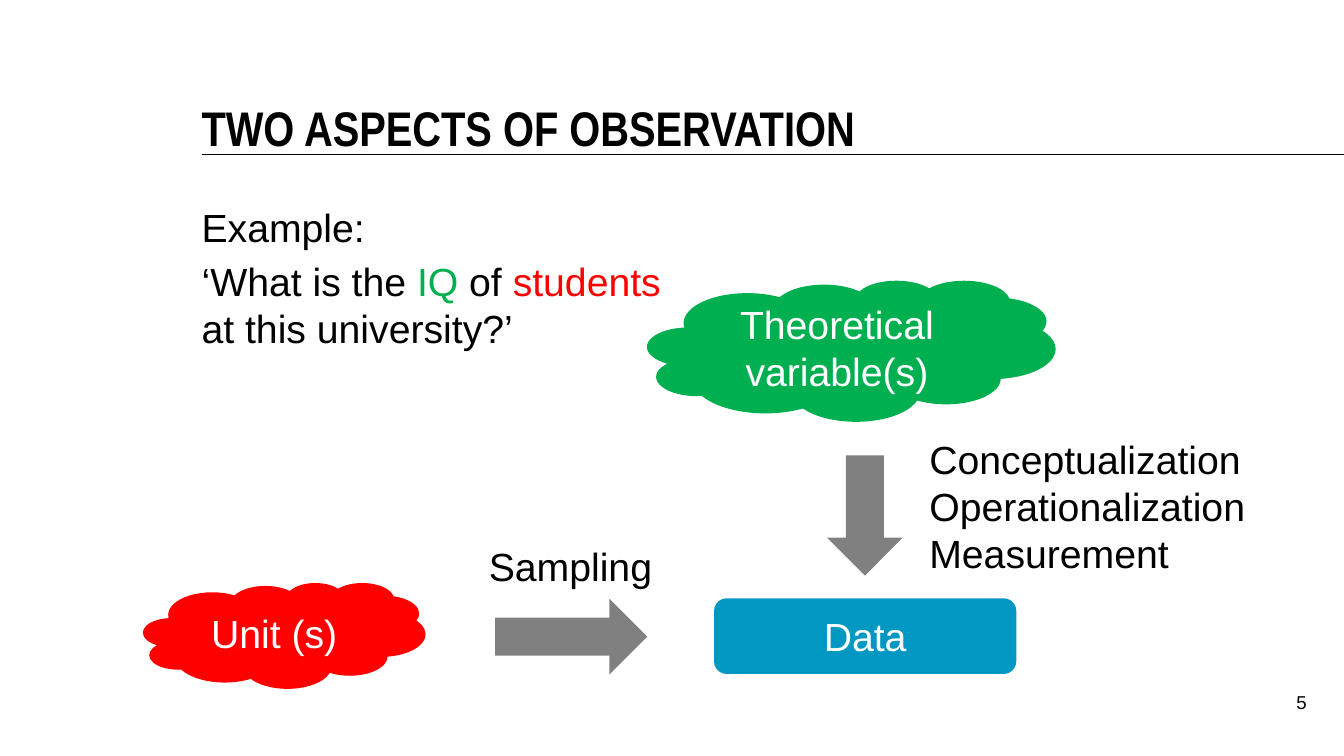
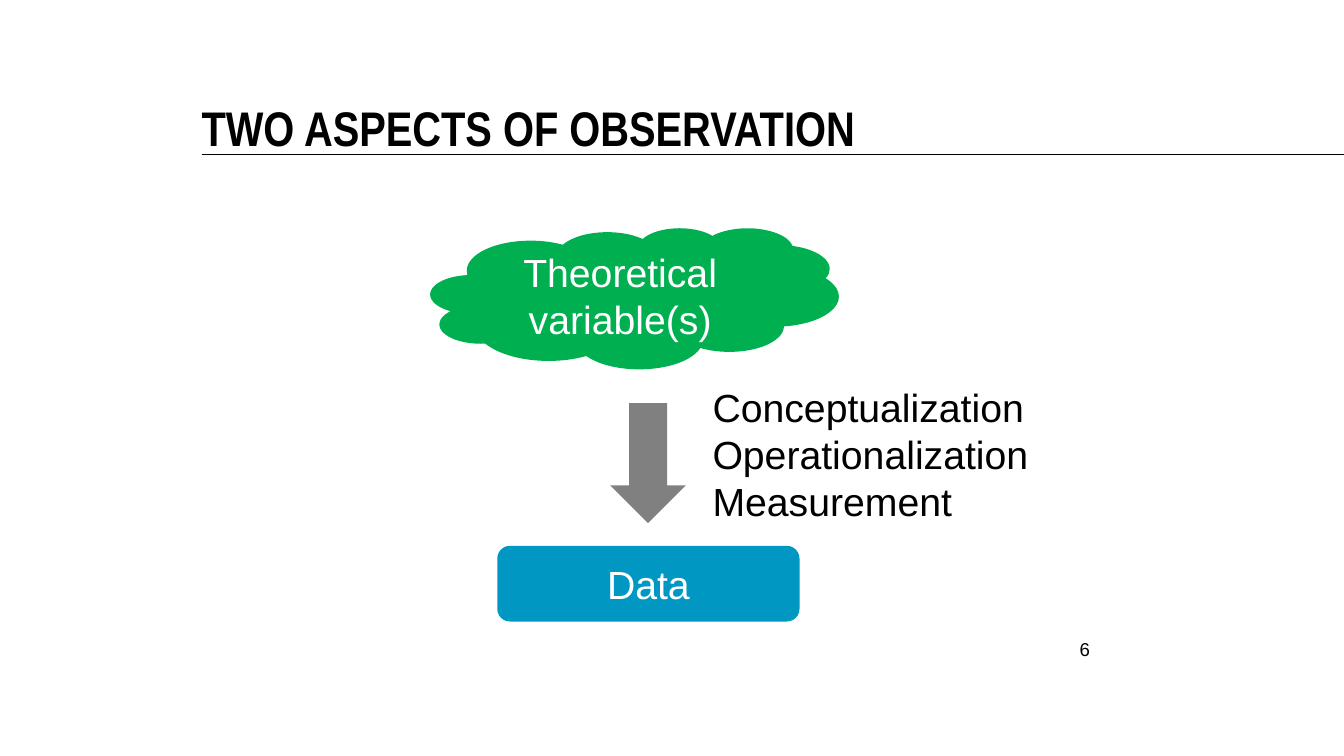
"""Builds two slides on the two aspects of observation."""
import dataclasses

import lxml.etree
import pptx
import pptx.dml.color
import pptx.enum.shapes
import pptx.enum.text
import pptx.oxml.ns
import pptx.util

RGB = pptx.dml.color.RGBColor
SHAPE = pptx.enum.shapes.MSO_SHAPE
ALIGN = pptx.enum.text.PP_ALIGN
ANCHOR = pptx.enum.text.MSO_ANCHOR
qn = pptx.oxml.ns.qn

BLACK = RGB(0x00, 0x00, 0x00)
WHITE = RGB(0xFF, 0xFF, 0xFF)
GREEN = RGB(0x00, 0xB0, 0x50)
RED = RGB(0xFF, 0x00, 0x00)
BLUE = RGB(0x00, 0x98, 0xC3)
GREY = RGB(0x80, 0x80, 0x80)
TITLE = "TWO ASPECTS OF OBSERVATION"
LEFT = 15
CHAIN_SIZE = (45.61, 52.13)
NUMBER_SIZE = (4.13, 6.93)


@dataclasses.dataclass
class Box:
    """A rectangle in inches, divided by percentages of its own size."""
    x: float
    y: float
    w: float
    h: float

    def area(self, x, y, w, h):
        """Return the area of this box given in percent."""
        return Box(self.x + self.w * x / 100, self.y + self.h * y / 100,
                   self.w * w / 100, self.h * h / 100)

    def emu(self):
        """Return left, top, width and height as lengths."""
        return [pptx.util.Inches(v) for v in (self.x, self.y, self.w, self.h)]


PAGE = Box(0, 0, 13.33, 7.5)


def write(sp, paragraphs, size=28, font="Arial", color=BLACK, bold=False,
          align=ALIGN.LEFT, anchor=ANCHOR.TOP, margins=(0.1, 0.05, 0.1, 0.05),
          wrap=True, leading=None, gap=0):
    """Fill a shape with paragraphs, each a list of (text, colour) runs or a string."""
    tf = sp.text_frame
    tf.auto_size = pptx.enum.text.MSO_AUTO_SIZE.NONE
    tf.word_wrap = wrap
    tf.vertical_anchor = anchor
    tf.margin_left, tf.margin_top, tf.margin_right, tf.margin_bottom = [
        pptx.util.Inches(m) for m in margins]
    for i, runs in enumerate(paragraphs):
        p = tf.add_paragraph() if i else tf.paragraphs[0]
        p.alignment = align
        p.space_before = pptx.util.Pt(gap if i else 0)
        if leading:
            p.line_spacing = pptx.util.Pt(leading)
        for text, tint in [(runs, color)] if isinstance(runs, str) else runs:
            r = p.add_run()
            r.text = text
            r.font.name = font
            r.font.size = pptx.util.Pt(size)
            r.font.bold = bold
            r.font.color.rgb = tint


def add_shape(slide, kind, box, fill, text=None, rotation=0):
    """Add a flat filled shape with an optional centred label."""
    sp = slide.shapes.add_shape(kind, *box.emu())
    sp.shadow.inherit = False
    sp.fill.solid()
    sp.fill.fore_color.rgb = fill
    sp.line.fill.background()
    sp.rotation = rotation
    if text:
        write(sp, [text], color=WHITE, align=ALIGN.CENTER, anchor=ANCHOR.MIDDLE)


def add_label(slide, box, paragraphs, **fmt):
    """Add a text box."""
    write(slide.shapes.add_textbox(*box.emu()), paragraphs, **fmt)


def place(sp, box):
    """Move a placeholder onto a box."""
    sp.left, sp.top, sp.width, sp.height = box.emu()


def add_master_rule(prs, slide):
    """Draw the line below the title and move it to the slide master."""
    x, y, w, _ = PAGE.area(LEFT, 20.4, 100 - LEFT, 0).emu()
    rule = slide.shapes.add_connector(
        pptx.enum.shapes.MSO_CONNECTOR.STRAIGHT, x, y, x + w, y)
    rule.line.color.rgb = BLACK
    rule.line.width = pptx.util.Pt(1)
    lxml.etree.SubElement(rule.element.spPr, qn("a:effectLst"))
    prs.slide_master.shapes.element.append(rule.element)


def add_slide(prs, layout, number, corner):
    """Add a slide with the shared title and its number."""
    slide = prs.slides.add_slide(prs.slide_layouts[layout])
    sp = slide.shapes.title
    place(sp, PAGE.area(LEFT, 10, 81.9, 10.67))
    write(sp, [TITLE], size=34.7, font="Arial Narrow", bold=True,
          anchor=ANCHOR.BOTTOM, margins=(0, 0, 0, 0), leading=33.3)
    add_label(slide, PAGE.area(*corner, *NUMBER_SIZE), [number], size=13.3,
              align=ALIGN.RIGHT, margins=(0.1, 0.05, 0, 0.05), leading=20)
    return slide


def add_example(slide, box):
    """Fill the body placeholder with the example question."""
    sp = slide.placeholders[1]
    place(sp, box)
    question = [("‘What is the ", BLACK), ("IQ", GREEN), (" of ", BLACK),
                ("students ", RED), ("at this university?’", BLACK)]
    write(sp, ["Example:", question], margins=(0, 0.05, 0.1, 0.05),
          leading=33.3, gap=5.6)
    for p in sp.text_frame.paragraphs:
        pPr = p._p.get_or_add_pPr()
        pPr.set("marL", "0")
        pPr.set("indent", "0")
        lxml.etree.SubElement(pPr, qn("a:buNone"))


def add_variable_chain(slide, box):
    """Draw the way from theoretical variables down to data."""
    add_shape(slide, SHAPE.ROUNDED_RECTANGLE, box.area(10.9, 80.7, 49.3, 19.2),
              BLUE, "Data")
    add_shape(slide, SHAPE.RIGHT_ARROW, box.area(25.7, 50.1, 19.6, 19.2),
              GREY, rotation=90)
    add_shape(slide, SHAPE.CLOUD, box.area(0, 0, 66.6, 35.8), GREEN,
              "Theoretical variable(s)")
    add_label(slide, box.area(44.4, 38.1, 55.6, 38.6),
              ["Conceptualization", "Operationalization", "Measurement"],
              wrap=False)


def add_sampling(slide, box):
    """Draw the way from units across to data."""
    add_shape(slide, SHAPE.RIGHT_ARROW, box.area(69.8, 40.7, 30.2, 50), GREY)
    add_shape(slide, SHAPE.CLOUD, box.area(0, 30, 56, 70), RED, "Unit (s)")
    add_label(slide, box.area(66.6, 0, 36.8, 38), ["Sampling"], wrap=False)


def main():
    """Build and save the presentation."""
    prs = pptx.Presentation()
    prs.slide_width, prs.slide_height = PAGE.emu()[2:]

    slide = add_slide(prs, 1, "5", (93.1, 90))
    add_master_rule(prs, slide)
    add_example(slide, PAGE.area(LEFT, 26.27, 36.31, 21.6))
    add_variable_chain(slide, PAGE.area(48.16, 37.07, *CHAIN_SIZE))
    add_sampling(slide, PAGE.area(10.65, 71.07, 37.51, 20))

    slide = add_slide(prs, 5, "6", (76.97, 82.93))
    add_variable_chain(slide, PAGE.area(32.03, 30.13, *CHAIN_SIZE))

    prs.save("out.pptx")


if __name__ == "__main__":
    main()
